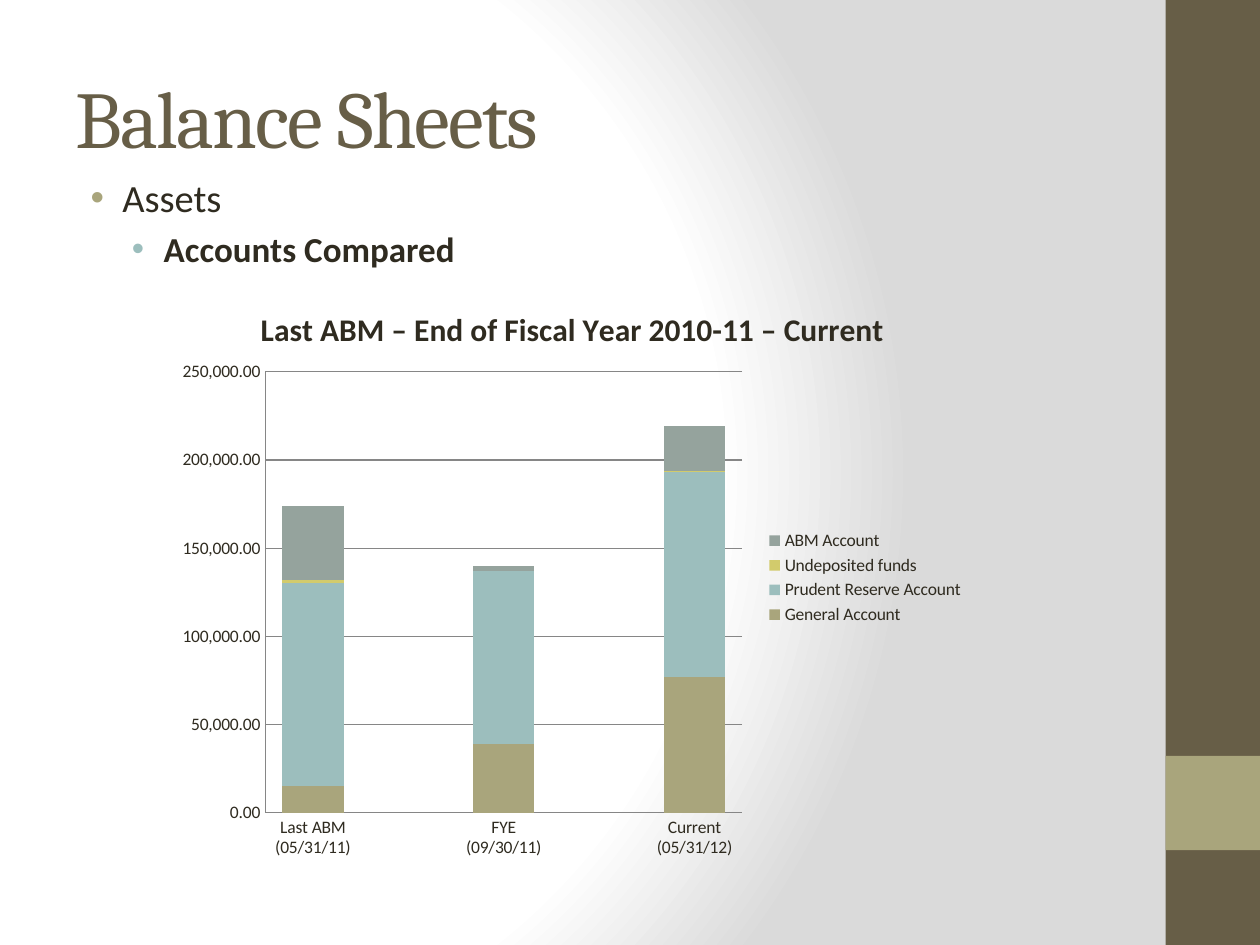
from lxml import etree
from pptx import Presentation
from pptx.chart.data import CategoryChartData
from pptx.dml.color import RGBColor
from pptx.enum import chart as ch, shapes, text
from pptx.oxml import parse_xml
from pptx.oxml.ns import nsdecls, qn
from pptx.util import Cm, Pt

COLORS = {
    "brown": "675E47", "olive": "A9A57C", "teal": "9CBEBD",
    "yellow": "D2CB6C", "sage": "95A39D", "ink": "2F2B20", "grid": "868686",
}
BACKGROUND_STOPS = [(0, "FFFFFF"), (75, "FFFFFF"), (100, "DADADA")]
SIDE_BANDS = [((23.5, 0, 1.9, 19.05), "brown"), ((23.5, 15.24, 1.9, 1.9), "olive")]

TITLE = "Balance Sheets"
# text, size, bold, left margin in cm, bullet colour
BULLETS = [
    ("Assets", 22, False, 0.95, "olive"),
    ("Accounts Compared", 20, True, 1.78, "teal"),
]
HANGING = 0.64

CHART_TITLE = "Last ABM – End of Fiscal Year 2010-11 – Current"
CATEGORIES = ["Last ABM (05/31/11)", "", "FYE (09/30/11)", "", "Current (05/31/12)"]
SERIES = [
    ("General Account", "olive", (15000, None, 39000, None, 77000)),
    ("Prudent Reserve Account", "teal", (115000, None, 98000, None, 116000)),
    ("Undeposited funds", "yellow", (2000, None, 0, None, 1000)),
    ("ABM Account", "sage", (42000, None, 3000, None, 25000)),
]
PLOT_LAYOUT = {"x": 0.12, "y": 0.15, "w": 0.59, "h": 0.75}


def rgb(name):
    return RGBColor.from_string(COLORS[name])


def style_font(font, size, color, name="Calibri", bold=False):
    font.size, font.name, font.bold = Pt(size), name, bold
    font.color.rgb = rgb(color)


def add_background(slide):
    """Radial gradient centred left of the middle."""
    slide.background.fill.gradient()
    old = slide.element.find(".//" + qn("a:gradFill"))
    stops = "".join(
        f'<a:gs pos="{pos * 1000}"><a:srgbClr val="{color}"/></a:gs>'
        for pos, color in BACKGROUND_STOPS)
    grad = parse_xml(
        f'<a:gradFill {nsdecls("a")} rotWithShape="1"><a:gsLst>{stops}</a:gsLst>'
        '<a:path path="circle"><a:fillToRect l="20000" t="50000" r="100000" b="50000"/>'
        '</a:path></a:gradFill>')
    old.getparent().replace(old, grad)


def add_side_bands(slide):
    for box, color in SIDE_BANDS:
        sp = slide.shapes.add_shape(shapes.MSO_SHAPE.RECTANGLE, *map(Cm, box))
        sp.shadow.inherit = False
        sp.fill.solid()
        sp.fill.fore_color.rgb = rgb(color)
        sp.line.fill.background()


def add_text_frame(slide, box, anchor):
    tf = slide.shapes.add_textbox(*map(Cm, box)).text_frame
    tf.word_wrap = True
    tf.vertical_anchor = anchor
    return tf


def add_title(slide):
    tf = add_text_frame(slide, (1.27, 0.76, 21.17, 3.18), text.MSO_ANCHOR.MIDDLE)
    r = tf.paragraphs[0].add_run()
    r.text = TITLE
    style_font(r.font, 46, "brown", "Cambria")
    r.font._element.set("spc", "-100")


def add_bullets(slide):
    tf = add_text_frame(slide, (1.27, 3.38, 21.17, 14.4), text.MSO_ANCHOR.TOP)
    for i, (words, size, bold, margin, color) in enumerate(BULLETS):
        p = tf.add_paragraph() if i else tf.paragraphs[0]
        p.level = i
        p.space_before = Pt(size * 0.2)
        pPr = p._p.get_or_add_pPr()
        pPr.set("marL", str(Cm(margin)))
        pPr.set("indent", str(-Cm(HANGING)))
        bullet_color = etree.SubElement(pPr, qn("a:buClr"))
        etree.SubElement(bullet_color, qn("a:srgbClr"), val=COLORS[color])
        etree.SubElement(pPr, qn("a:buFont"), typeface="Arial")
        etree.SubElement(pPr, qn("a:buChar"), char="•")
        r = p.add_run()
        r.text = words
        style_font(r.font, size, "ink", bold=bold)


def set_plot_layout(chart):
    plot_area = chart._chartSpace.chart.plotArea
    for old in plot_area.findall(qn("c:layout")):
        plot_area.remove(old)
    sizes = "".join(f'<c:{key} val="{val}"/>' for key, val in PLOT_LAYOUT.items())
    plot_area.insert(0, parse_xml(
        f'<c:layout {nsdecls("c")}><c:manualLayout><c:layoutTarget val="inner"/>'
        f'<c:xMode val="edge"/><c:yMode val="edge"/>{sizes}'
        '</c:manualLayout></c:layout>'))


def add_accounts_chart(slide):
    data = CategoryChartData(number_format="#,##0.00")
    data.categories = CATEGORIES
    for name, _, values in SERIES:
        data.add_series(name, values)
    chart = slide.shapes.add_chart(
        ch.XL_CHART_TYPE.COLUMN_STACKED,
        Cm(3.39), Cm(5.72), Cm(16.3), Cm(11.85), data).chart
    style_font(chart.font, 10, "ink")

    chart.has_title = True
    r = chart.chart_title.text_frame.paragraphs[0].add_run()
    r.text = CHART_TITLE
    style_font(r.font, 18, "ink", bold=True)
    chart.chart_title.include_in_layout = False

    chart.has_legend = True
    chart.legend.position = ch.XL_LEGEND_POSITION.RIGHT
    chart.legend.include_in_layout = False

    plot = chart.plots[0]
    plot.gap_width, plot.overlap, plot.vary_by_categories = 55, 100, False
    for series, (_, color, _) in zip(plot.series, SERIES):
        series.format.fill.solid()
        series.format.fill.fore_color.rgb = rgb(color)

    value_axis = chart.value_axis
    value_axis.minimum_scale, value_axis.maximum_scale = 0, 250000
    value_axis.major_unit = 50000
    value_axis.has_major_gridlines = True
    value_axis.tick_labels.number_format = "#,##0.00"
    value_axis.tick_labels.number_format_is_linked = False
    for axis in (chart.category_axis, value_axis):
        axis.major_tick_mark = axis.minor_tick_mark = ch.XL_TICK_MARK.NONE
    for part in (chart.category_axis, value_axis, value_axis.major_gridlines):
        part.format.line.color.rgb = rgb("grid")
        part.format.line.width = Pt(0.75)
    set_plot_layout(chart)


def main():
    prs = Presentation()
    prs.slide_width, prs.slide_height = Cm(25.4), Cm(19.05)
    s = prs.slides.add_slide(prs.slide_layouts[6])
    add_background(s)
    add_side_bands(s)
    add_title(s)
    add_bullets(s)
    add_accounts_chart(s)
    prs.save("out.pptx")


if __name__ == "__main__":
    main()
